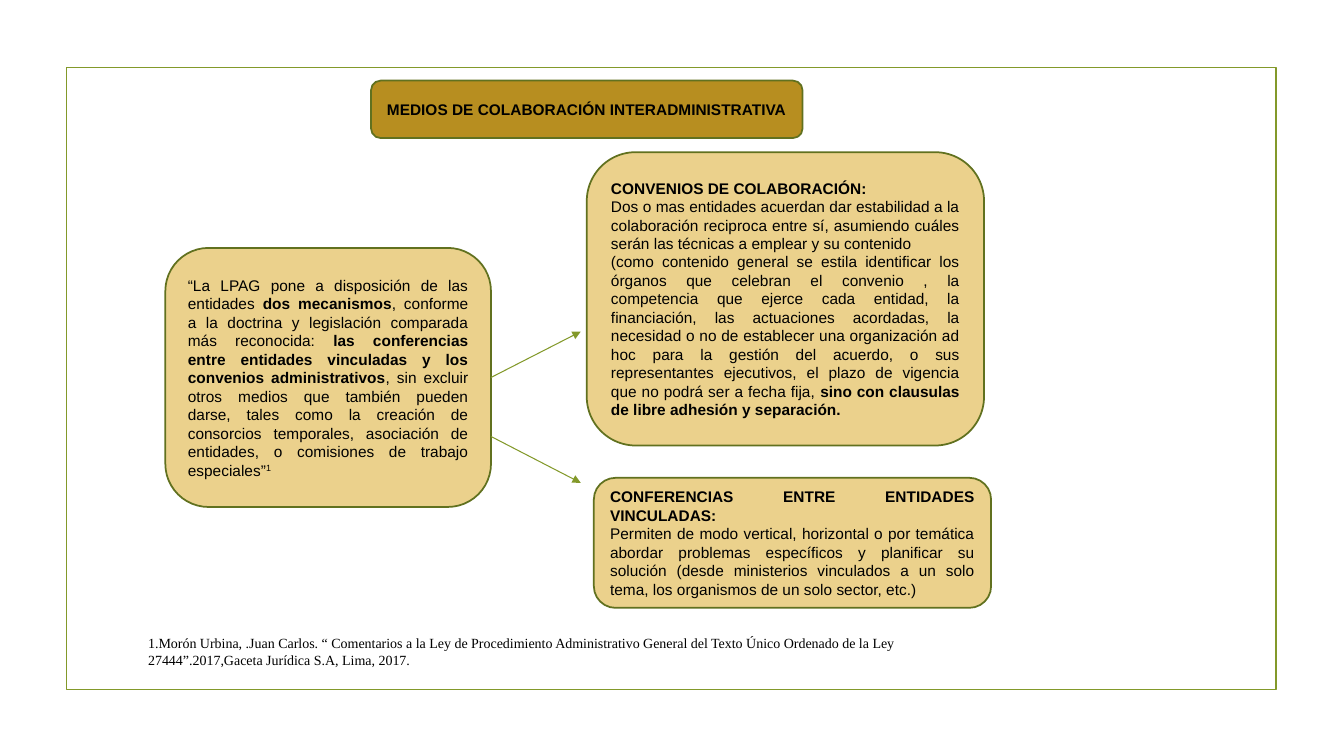
from pptx import Presentation
from pptx.util import Inches, Pt
from pptx.dml.color import RGBColor
from pptx.enum.shapes import MSO_SHAPE as Geo, MSO_CONNECTOR as Conn
from pptx.enum.text import PP_ALIGN as Align, MSO_ANCHOR as Anchor
from lxml import etree
from pptx.oxml.ns import qn

GOLD, SAND, OLIVE, GREEN, BLACK = "B78E20", "EBD18C", "61711F", "83992A", "000000"
FRAME = (0.66, 0.67, 12, 6.17)

BOXES = {
    "title": ((3.68, 0.8, 4.28, 0.57), GOLD, Align.CENTER, [
        [("MEDIOS DE COLABORACIÓN INTERADMINISTRATIVA", "b")]]),
    "means": ((1.64, 2.46, 3.23, 2.57), SAND, Align.JUSTIFY, [
        [("“La LPAG pone a disposición de las entidades ", ""),
         ("dos mecanismos", "b"),
         (", conforme a la doctrina y legislación comparada más reconocida: ", ""),
         ("las conferencias entre entidades vinculadas y los convenios administrativos", "b"),
         (", sin excluir otros medios que también pueden darse, tales como la creación de "
          "consorcios temporales, asociación de entidades, o comisiones de trabajo especiales”", ""),
         ("1", "sup")]]),
    "pacts": ((5.82, 1.51, 3.94, 2.91), SAND, Align.JUSTIFY, [
        [("CONVENIOS DE COLABORACIÓN: ", "b")],
        [("Dos o mas entidades acuerdan dar estabilidad a la colaboración reciproca entre sí, "
          "asumiendo cuáles serán las técnicas a emplear y su contenido", "")],
        [("(como contenido general se estila identificar los órganos que celebran el convenio , "
          "la competencia que ejerce cada entidad, la financiación, las actuaciones acordadas, "
          "la necesidad o no de establecer una organización ad hoc para la gestión del acuerdo, "
          "o sus representantes ejecutivos, el plazo de vigencia que no podrá ser a fecha fija, ", ""),
         ("sino con clausulas de libre adhesión y separación.", "b")]]),
    "talks": ((5.89, 4.74, 3.94, 1.29), SAND, Align.JUSTIFY, [
        [("CONFERENCIAS ENTRE ENTIDADES VINCULADAS: ", "b")],
        [("Permiten de modo vertical, horizontal o por temática abordar problemas específicos y "
          "planificar su solución (desde ministerios vinculados a un solo tema, los organismos "
          "de un solo sector, etc.)", "")]]),
}
ARROWS = [((4.87, 3.75), (5.76, 3.29)), ((4.87, 4.33), (5.76, 4.79))]
NOTE = ((1.37, 6.31, 7.99, 0.31), [[(
    "1.Morón Urbina, .Juan Carlos. “ Comentarios a la Ley de Procedimiento Administrativo General "
    "del Texto Único Ordenado de la Ley 27444”.2017,Gaceta Jurídica S.A, Lima, 2017.", "")]])


def color(code):
    return RGBColor.from_string(code)


def inch(nums):
    return [Inches(n) for n in nums]


def stroke(item, code, width):
    item.line.color.rgb = color(code)
    item.line.width = Pt(width)


def write(shape, paras, align, face, size):
    frame = shape.text_frame
    frame.word_wrap = True
    frame.vertical_anchor = Anchor.MIDDLE
    for i, runs in enumerate(paras):
        para = frame.paragraphs[0] if i == 0 else frame.add_paragraph()
        para.alignment = align
        for words, style in runs:
            run = para.add_run()
            run.text = words
            look = {"name": face, "size": Pt(size), "bold": style == "b"}
            for key, value in look.items():
                setattr(run.font, key, value)
            run.font.color.rgb = color(BLACK)
            if style == "sup":
                run.font._element.set("baseline", "30000")


def block(geo, place, fill, edge):
    shape = slide.shapes.add_shape(geo, *inch(place))
    shape.shadow.inherit = False
    if fill:
        shape.fill.solid()
        shape.fill.fore_color.rgb = color(fill)
    else:
        shape.fill.background()
    stroke(shape, edge, 1.25)
    return shape


deck = Presentation()
deck.slide_width, deck.slide_height = inch((13.33, 7.5))
slide = deck.slides.add_slide(deck.slide_layouts[6])

block(Geo.RECTANGLE, FRAME, None, GREEN)
made = {}
for name, (place, fill, align, paras) in BOXES.items():
    made[name] = block(Geo.ROUNDED_RECTANGLE, place, fill, OLIVE)
    write(made[name], paras, align, "Arial", 11)

links = []
for start, end in ARROWS:
    link = slide.shapes.add_connector(Conn.STRAIGHT, *inch(start + end))
    stroke(link, GREEN, 0.75)
    etree.SubElement(link.line._get_or_add_ln(), qn("a:tailEnd")).set("type", "triangle")
    etree.SubElement(link._element.spPr, qn("a:effectLst"))
    links.append(link)
links[0].begin_connect(made["means"], 3)

place, paras = NOTE
write(slide.shapes.add_textbox(*inch(place)), paras, Align.LEFT, "Times New Roman", 10)

deck.save("out.pptx")
